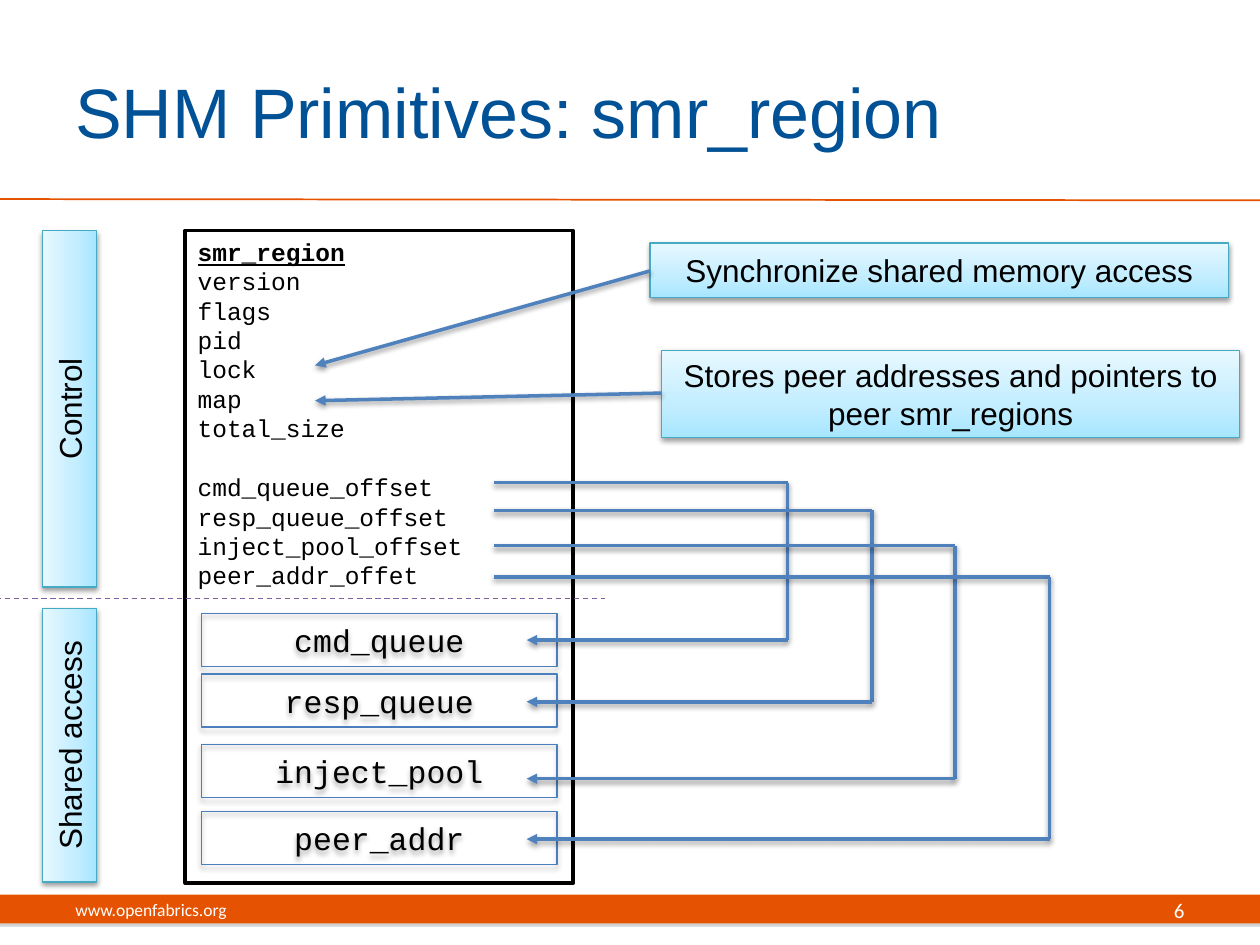
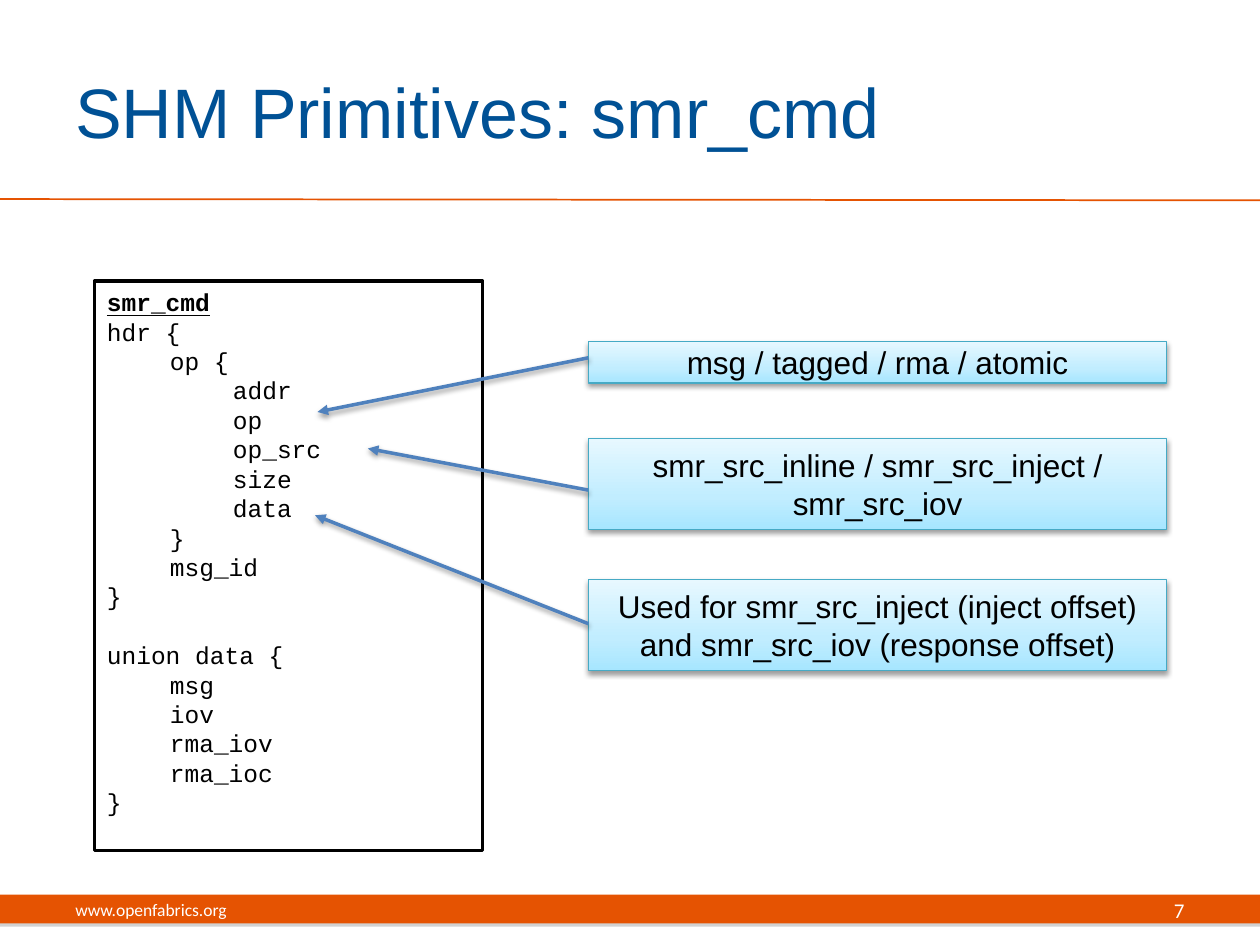
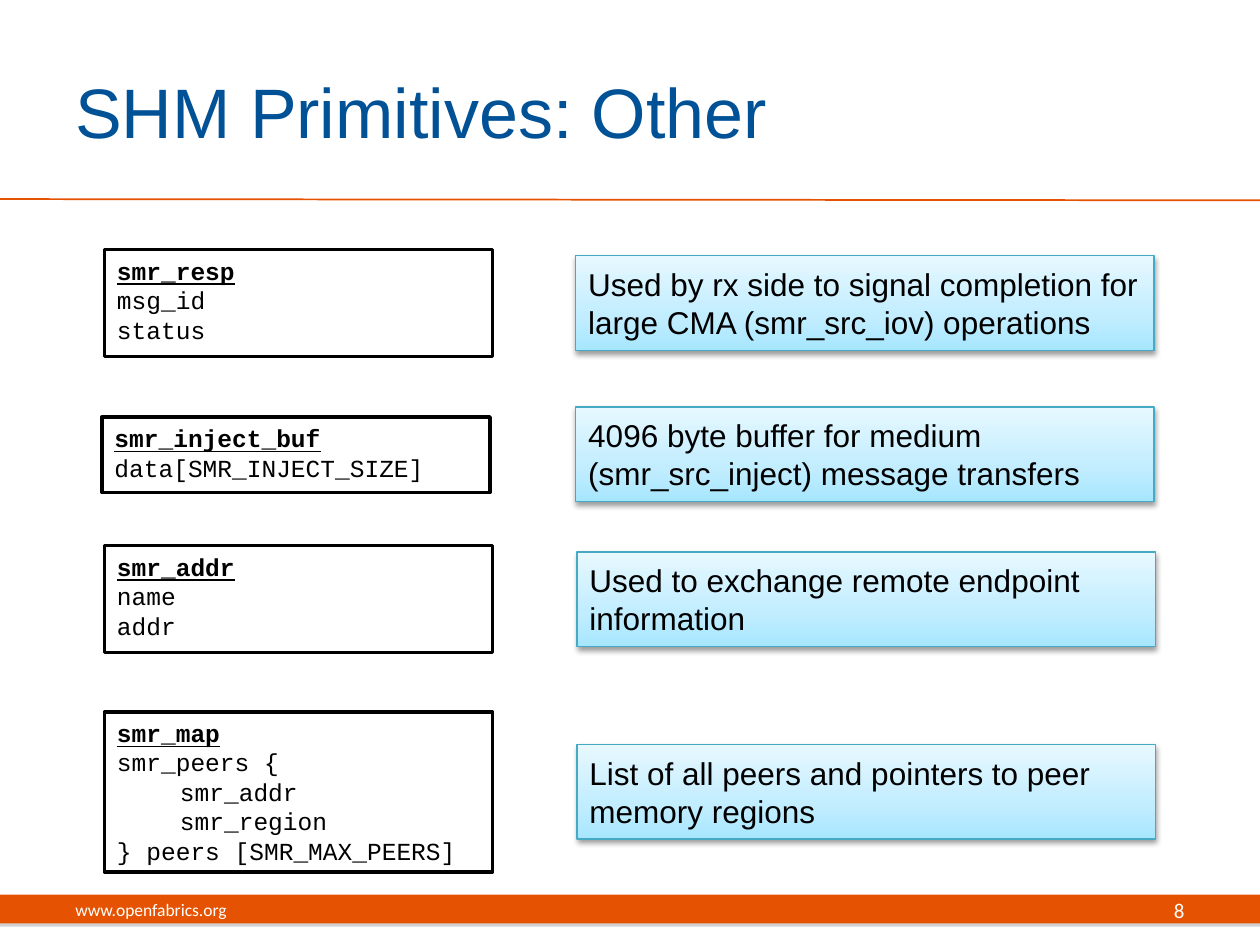
from lxml import etree
from pptx import Presentation
from pptx.dml.color import RGBColor
from pptx.enum import dml, shapes, text
from pptx.oxml import parse_xml
from pptx.oxml.ns import nsdecls, qn
from pptx.util import Inches, Pt

HUE = {"white": "FFFFFF", "black": "000000", "orange": "E55302", "title": "005195",
       "arrow": "4F81BD", "edge": "46AAC5", "queue": "4B7EBC", "dash": "7D60A0",
       "gray": "808080"}
GRAD = [(0, "A7E6FF"), (35, "C1EDFF"), (100, "E7F8FF")]
MONO, SANS, FOOT = "Courier New", "Arial", "Calibri"
LEFT, MID, RIGHT = text.PP_ALIGN.LEFT, text.PP_ALIGN.CENTER, text.PP_ALIGN.RIGHT
SOFT = ("black", 38, 3.1, 1.6)
FIRM = ("black", 35, 3.1, 1.8)
BAND = ("gray", 35, 0, 1.8)
TAB, GAP = 0.5, 16.8
NOTE_W, CODE_W = 4.59, 3.08

SLIDES = [
    {"title": "SHM Primitives: smr_region", "page": 6,
     "codes": [(1.47, 1.83, 5.18, [
         "smr_region", "version", "flags", "pid", "lock", "map", "total_size", "",
         "cmd_queue_offset", "resp_queue_offset", "inject_pool_offset", "peer_addr_offet"])],
     "notes": [(5.16, 1.93, 0.43, "Synchronize shared memory access"),
               (5.25, 2.78, 0.69, "Stores peer addresses and pointers to peer smr_regions")],
     "align": MID,
     "arrows": [((5.16, 2.15), (2.5, 2.9)), ((5.25, 3.12), (2.5, 3.18))],
     "sides": [(3.03, 2.83, "Control"), (5.7, 2.17, "Shared access")],
     "queues": [("cmd_queue", 4.87, 3.83, 6.25, 5.08),
                ("resp_queue", 5.35, 4.05, 6.92, 5.57),
                ("inject_pool", 5.91, 4.33, 7.58, 6.18),
                ("peer_addr", 6.44, 4.58, 8.33, 6.66)]},
    {"title": "SHM Primitives: smr_cmd", "page": 7,
     "codes": [(0.75, 2.23, 4.52, [
         "smr_cmd", "hdr {", "\top {", "\t\taddr", "\t\top", "\t\top_src", "\t\tsize",
         "\t\tdata", "\t}", "\tmsg_id", "}", "", "union data {", "\tmsg", "\tiov",
         "\trma_iov", "\trma_ioc", "}"])],
     "notes": [(4.67, 2.71, 0.33, "msg / tagged / rma / atomic"),
               (4.67, 3.48, 0.72, "smr_src_inline / smr_src_inject / smr_src_iov"),
               (4.67, 4.6, 0.72,
                "Used for smr_src_inject (inject offset) and smr_src_iov (response offset)")],
     "align": MID,
     "arrows": [((4.67, 2.84), (2.52, 3.27)), ((4.67, 3.89), (2.92, 3.56)),
                ((4.67, 4.95), (2.5, 4.09))]},
    {"title": "SHM Primitives: Other", "page": 8,
     "codes": [(0.83, 1.98, 0.85, ["smr_resp", "msg_id", "status"]),
               (0.81, 3.31, 0.6, ["smr_inject_buf", "data[SMR_INJECT_SIZE]"]),
               (0.83, 4.33, 0.85, ["smr_addr", "name", "addr"]),
               (0.83, 5.65, 1.27, ["smr_map", "smr_peers {", "\tsmr_addr", "\tsmr_region",
                                   "} peers [SMR_MAX_PEERS]"])],
     "notes": [(4.57, 2.03, 0.75,
                "Used by rx side to signal completion for large CMA (smr_src_iov) operations"),
               (4.57, 3.23, 0.75,
                "4096 byte buffer for medium (smr_src_inject) message transfers"),
               (4.58, 4.38, 0.75, "Used to exchange remote endpoint information"),
               (4.58, 5.91, 0.75, "List of all peers and pointers to peer memory regions")],
     "align": LEFT},
]


def color(name):
    return RGBColor.from_string(HUE[name])


def shade(effects, look):
    name, alpha, blur, dist = look
    effects.append(parse_xml(
        f'<a:outerShdw {nsdecls("a")} blurRad="{Pt(blur)}" dist="{Pt(dist)}" dir="5400000" '
        f'rotWithShape="0"><a:srgbClr val="{HUE[name]}"><a:alpha val="{alpha * 1000}"/>'
        f'</a:srgbClr></a:outerShdw>'))


def blend(shape):
    stops = "".join(f'<a:gs pos="{pos * 1000}"><a:srgbClr val="{rgb}"/></a:gs>'
                    for pos, rgb in GRAD)
    props = shape._element.spPr
    props.replace(props.find(qn("a:noFill")), parse_xml(
        f'<a:gradFill {nsdecls("a")} rotWithShape="1"><a:gsLst>{stops}</a:gsLst>'
        f'<a:lin ang="16200000" scaled="0"/></a:gradFill>'))


def box(slide, at, fill=None, edge=None, width=0.75, look=None):
    shape = slide.shapes.add_shape(shapes.MSO_SHAPE.RECTANGLE, *map(Inches, at))
    if fill:
        shape.fill.solid()
        shape.fill.fore_color.rgb = color(fill)
    else:
        shape.fill.background()
    if edge:
        shape.line.color.rgb = color(edge)
        shape.line.width = Pt(width)
    else:
        shape.line.fill.background()
    shape.shadow.inherit = False
    if look:
        shade(shape._element.spPr.find(qn("a:effectLst")), look)
    return shape


def style(para, size, face, hue="black", align=LEFT):
    para.alignment = align
    para.font.size, para.font.name = Pt(size), face
    para.font.color.rgb = color(hue)


def write(shape, words, *look):
    frame = shape.text_frame
    frame.word_wrap = True
    frame.vertical_anchor = text.MSO_ANCHOR.MIDDLE
    frame.text = words
    style(frame.paragraphs[0], *look)


def label(slide, at, words, *look):
    write(slide.shapes.add_textbox(*map(Inches, at)), words, *look)


def line(slide, start, end, hue="arrow", width=2, look=SOFT, head=False, dash=False):
    link = slide.shapes.add_connector(shapes.MSO_CONNECTOR.STRAIGHT,
                                      *map(Inches, start + end))
    link.line.color.rgb = color(hue)
    link.line.width = Pt(width)
    if dash:
        link.line.dash_style = dml.MSO_LINE.DASH
    if head:
        etree.SubElement(link.line._get_or_add_ln(), qn("a:tailEnd"), type="triangle")
    effects = etree.SubElement(link._element.spPr, qn("a:effectLst"))
    if look:
        shade(effects, look)


def code(slide, x, y, height, rows):
    frame = box(slide, (x, y, CODE_W, height), "white", "black", 2).text_frame
    frame.word_wrap = True
    frame.vertical_anchor = text.MSO_ANCHOR.TOP
    para = frame.paragraphs[0]
    for i, row in enumerate(rows):
        if not row:
            continue
        if i:
            para = frame.add_paragraph()
            if not rows[i - 1]:
                para.space_before = Pt(GAP)
        para.text = row.lstrip("\t")
        para._p.get_or_add_pPr().set("marL", str(Inches(TAB * row.count("\t"))))
        style(para, 14, MONO)
        para.font.bold = para.font.underline = i == 0


def note(slide, at, words, align):
    shape = box(slide, at, edge="edge", look=SOFT)
    blend(shape)
    write(shape, words, 18, SANS, "black", align)
    return shape


def frame_page(slide, title, page):
    box(slide, (0, 7.1, 10, 0.23), "orange", look=BAND)
    line(slide, (0, 1.58), (10, 1.59), "orange", 1, None)
    label(slide, (0.5, 0.25, 8.17, 1.25), title, 40, SANS, "title")
    label(slide, (0.5, 7.02, 3.17, 0.4), "www.openfabrics.org", 10, FOOT, "white")
    label(slide, (7.17, 7.02, 2.33, 0.4), str(page), 12, FOOT, "white", RIGHT)


def queue(slide, name, top, start, turn, end):
    write(box(slide, (1.6, top, 2.82, 0.42), edge="queue", look=FIRM),
          name, 18, MONO, "black", MID)
    line(slide, (3.92, start), (turn, start))
    line(slide, (turn, start), (turn, end))
    line(slide, (turn, end), (4.18, end), head=True)


def main():
    deck = Presentation()
    deck.slide_width, deck.slide_height = Inches(10), Inches(7.5)
    for data in SLIDES:
        slide = deck.slides.add_slide(deck.slide_layouts[6])
        frame_page(slide, data["title"], data["page"])
        for block in data["codes"]:
            code(slide, *block)
        for x, y, height, words in data["notes"]:
            note(slide, (x, y, NOTE_W, height), words, data["align"])
        for start, end in data.get("arrows", []):
            line(slide, start, end, head=True)
        for top, length, words in data.get("sides", []):
            side = note(slide, (0.55 - length / 2, top, length, 0.43), words, MID)
            side.rotation = 270
        if "queues" in data:
            line(slide, (-0.03, 4.75), (4.8, 4.75), "dash", 0.75, None, dash=True)
        for item in data.get("queues", []):
            queue(slide, *item)
    deck.save("out.pptx")


if __name__ == "__main__":
    main()
